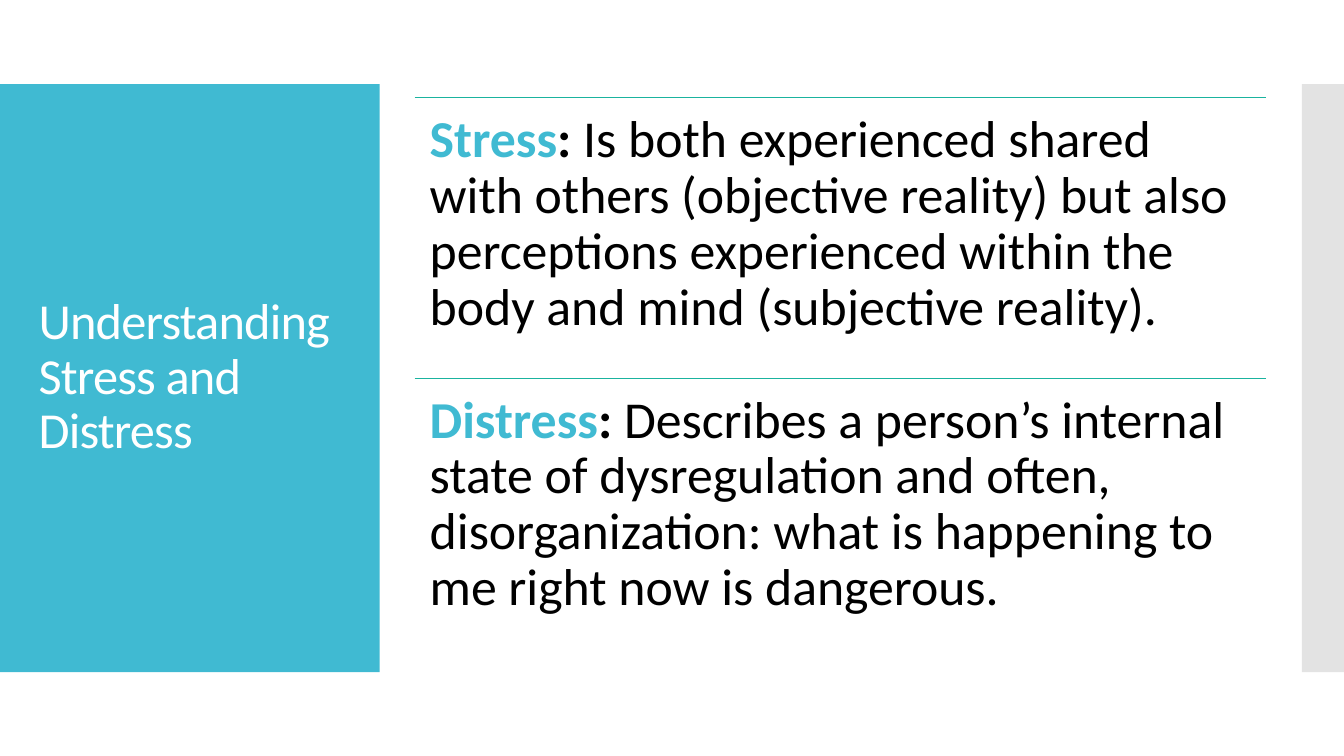
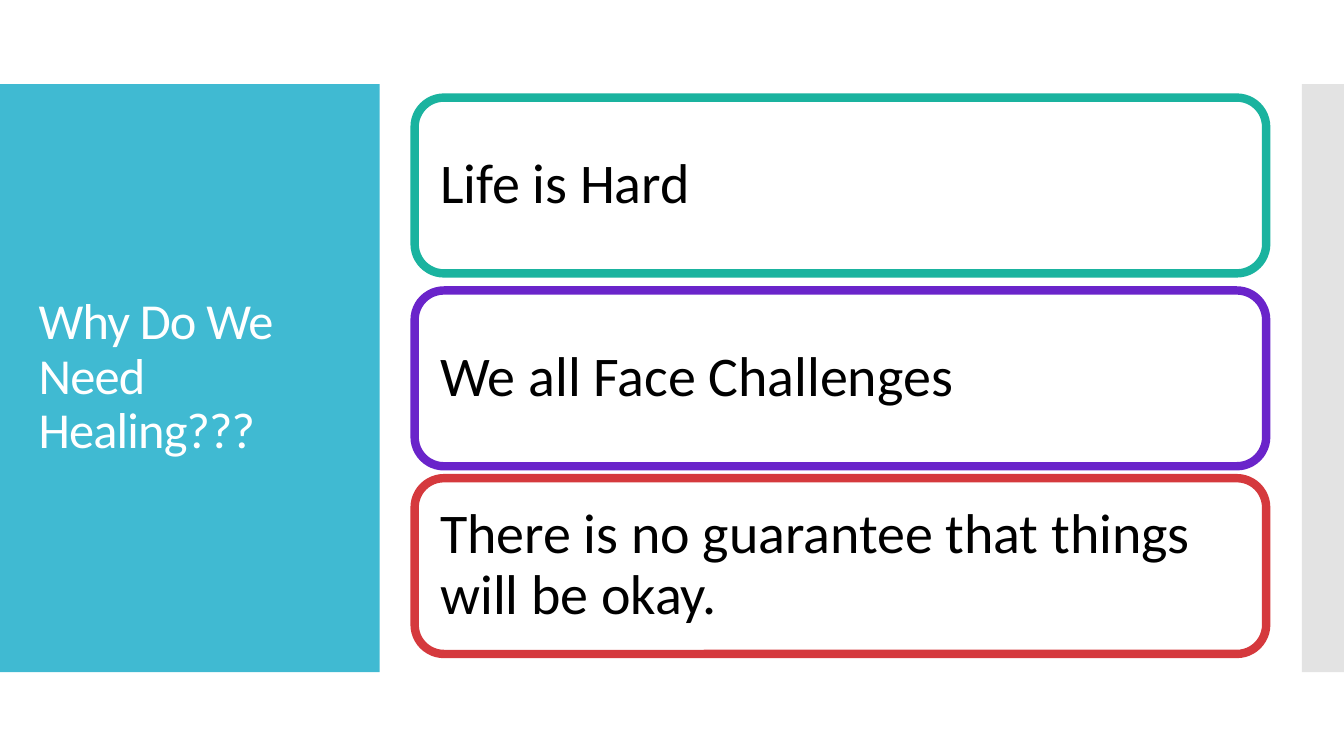
"""Build two slides on stress, distress and the need for healing."""
import pptx
import pptx.dml.color
import pptx.enum.shapes
import pptx.enum.text
import pptx.oxml.ns
import pptx.util
from lxml import etree

Cm = pptx.util.Cm
Pt = pptx.util.Pt
RGBColor = pptx.dml.color.RGBColor
MSO_SHAPE = pptx.enum.shapes.MSO_SHAPE
MSO_ANCHOR = pptx.enum.text.MSO_ANCHOR
qn = pptx.oxml.ns.qn

SKY = RGBColor(0x40, 0xBA, 0xD2)
GREY = RGBColor(0xC8, 0xC8, 0xC8)
TEAL = RGBColor(0x1A, 0xB3, 0x9F)
PURPLE = RGBColor(0x6A, 0x24, 0xCA)
RED = RGBColor(0xD5, 0x39, 0x3D)
WHITE = RGBColor(0xFF, 0xFF, 0xFF)
BLACK = RGBColor(0x00, 0x00, 0x00)
FONT = "Calibri"

DEFINITIONS_TITLE = "Understanding Stress and Distress"
DEFINITIONS = [
    ("Stress", "Is both experienced shared with others (objective reality) but also "
               "perceptions experienced within the body and mind (subjective reality)."),
    ("Distress", "Describes a person’s internal state of dysregulation and often, "
                 "disorganization: what is happening to me right now is dangerous."),
]
REASONS_TITLE = "Why Do We Need Healing???"
REASONS = [
    ("Life is Hard", TEAL, Cm(2.46)),
    ("We all Face Challenges", PURPLE, Cm(7.32)),
    ("There is no guarantee that things will be okay.", RED, Cm(12.05)),
]

SLIDE_WIDTH, SLIDE_HEIGHT = Cm(33.87), Cm(19.05)
BAND_TOP, BAND_HEIGHT = Cm(2.12), Cm(14.82)
BANDS = [(Cm(0), Cm(9.57), SKY, 100), (Cm(32.81), Cm(1.06), GREY, 50)]
TITLE_BOX = Cm(0.72), Cm(3.13), Cm(8.17), Cm(12.78)
BODY_LEFT, BODY_TOP, BODY_WIDTH = Cm(10.45), Cm(2.46), Cm(21.46)
DEFINITION_HEIGHT, DEFINITION_INSET = Cm(7.07), Cm(0.38)
REASON_HEIGHT, REASON_INSET = Cm(4.43), Cm(0.43)


def format_run(run, size, color, bold=False):
    run.font.name = FONT
    run.font.size = Pt(size)
    run.font.bold = bold
    run.font.color.rgb = color


def format_frame(frame, anchor, inset=None):
    frame.word_wrap = True
    frame.vertical_anchor = anchor
    if inset is not None:
        frame.margin_left = frame.margin_right = inset
        frame.margin_top = frame.margin_bottom = inset
    paragraph = frame.paragraphs[0]
    paragraph.alignment = pptx.enum.text.PP_ALIGN.LEFT
    paragraph.line_spacing = 0.9
    return paragraph


def add_bands(layout, slide):
    """Draw the side bands and hand them to the layout behind its placeholders."""
    for position, (left, width, color, opacity) in enumerate(BANDS, start=2):
        band = slide.shapes.add_shape(MSO_SHAPE.RECTANGLE, left, BAND_TOP, width, BAND_HEIGHT)
        band.shadow.inherit = False
        band.fill.solid()
        band.fill.fore_color.rgb = color
        band.line.fill.background()
        if opacity < 100:
            tint = band._element.spPr.find(qn("a:solidFill"))[0]
            etree.SubElement(tint, qn("a:alpha")).set("val", str(opacity * 1000))
        layout.shapes._spTree.insert(position, band._element)


def add_titled_slide(deck, layout, heading):
    slide = deck.slides.add_slide(layout)
    title = slide.shapes.title
    title.left, title.top, title.width, title.height = TITLE_BOX
    title.text_frame.text = heading
    paragraph = format_frame(title.text_frame, MSO_ANCHOR.MIDDLE)
    title.text_frame.auto_size = pptx.enum.text.MSO_AUTO_SIZE.NONE
    run = paragraph.runs[0]
    format_run(run, 36, WHITE)
    run.font._element.set("spc", "-60")
    return slide


def add_definition(slide, top, term, meaning):
    rule = slide.shapes.add_connector(pptx.enum.shapes.MSO_CONNECTOR.STRAIGHT,
                                      BODY_LEFT, top, BODY_LEFT + BODY_WIDTH, top)
    rule.line.color.rgb = TEAL
    rule.line.width = Pt(0.85)
    etree.SubElement(rule._element.spPr, qn("a:effectLst"))
    definition = slide.shapes.add_textbox(BODY_LEFT, top, BODY_WIDTH, DEFINITION_HEIGHT)
    paragraph = format_frame(definition.text_frame, MSO_ANCHOR.TOP, DEFINITION_INSET)
    for text, color, bold in ((term, SKY, True), (": ", BLACK, True), (meaning, BLACK, False)):
        run = paragraph.add_run()
        run.text = text
        format_run(run, 37, color, bold)


def add_reason(slide, text, color, top):
    card = slide.shapes.add_shape(MSO_SHAPE.ROUNDED_RECTANGLE,
                                  BODY_LEFT, top, BODY_WIDTH, REASON_HEIGHT)
    card.shadow.inherit = False
    card.fill.background()
    card.line.color.rgb = color
    card.line.width = Pt(6)
    card.text_frame.text = text
    paragraph = format_frame(card.text_frame, MSO_ANCHOR.MIDDLE, REASON_INSET)
    format_run(paragraph.runs[0], 40, BLACK)


def main():
    deck = pptx.Presentation()
    deck.slide_width, deck.slide_height = SLIDE_WIDTH, SLIDE_HEIGHT
    layout = deck.slide_layouts.get_by_name("Title Only")

    definitions = add_titled_slide(deck, layout, DEFINITIONS_TITLE)
    add_bands(layout, definitions)
    for row, (term, meaning) in enumerate(DEFINITIONS):
        add_definition(definitions, BODY_TOP + row * DEFINITION_HEIGHT, term, meaning)

    reasons = add_titled_slide(deck, layout, REASONS_TITLE)
    for text, color, top in REASONS:
        add_reason(reasons, text, color, top)

    deck.save("out.pptx")


if __name__ == "__main__":
    main()
